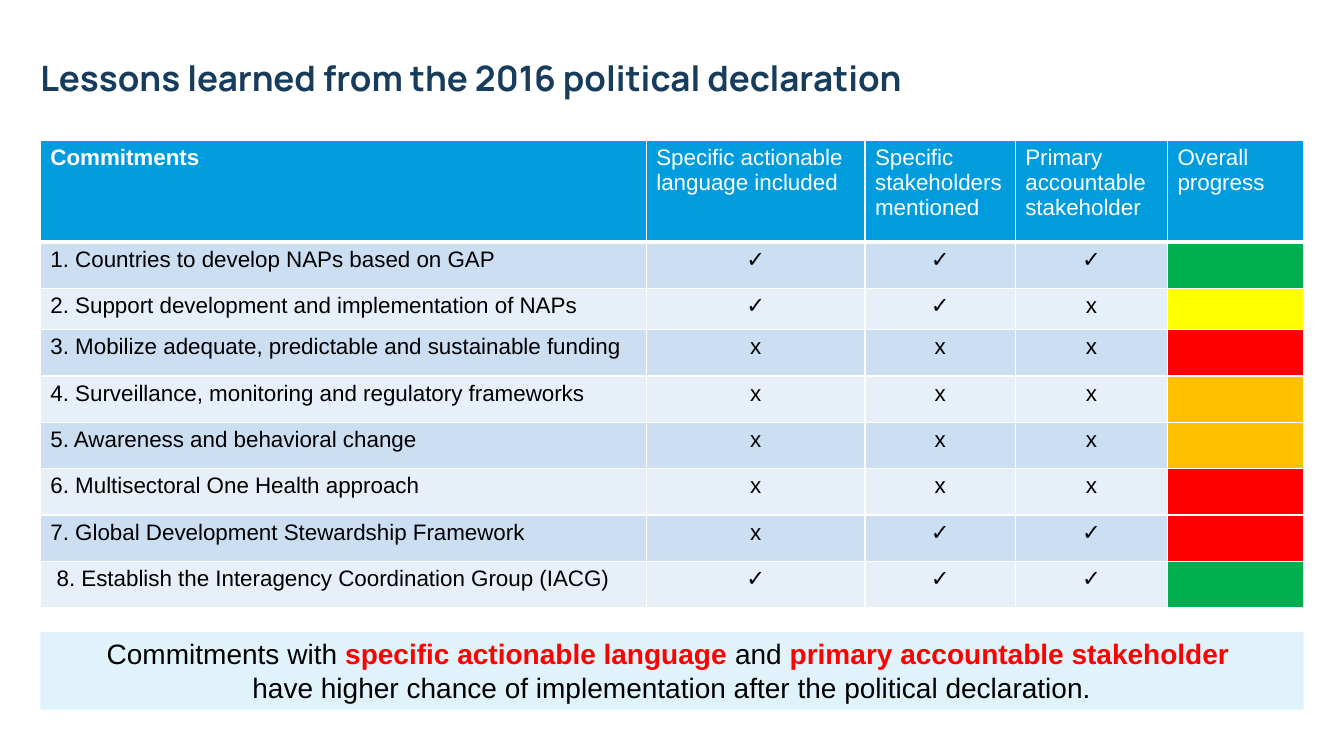
from lxml.etree import SubElement
from pptx import Presentation
from pptx.dml.color import RGBColor
from pptx.enum.shapes import MSO_SHAPE
from pptx.enum.text import MSO_ANCHOR, MSO_AUTO_SIZE, PP_ALIGN
from pptx.oxml import parse_xml
from pptx.oxml.ns import nsdecls
from pptx.util import Inches, Pt

WHITE = RGBColor(0xFF, 0xFF, 0xFF)
BLACK = RGBColor(0x00, 0x00, 0x00)
NAVY = RGBColor(0x18, 0x3C, 0x5C)
BLUE = RGBColor(0x00, 0x9C, 0xDE)
BANDS = (RGBColor(0xCC, 0xDE, 0xF2), RGBColor(0xE7, 0xEF, 0xF9))
PALE_BLUE = RGBColor(0xE0, 0xF3, 0xFB)
GREEN = RGBColor(0x00, 0xB0, 0x50)
YELLOW = RGBColor(0xFF, 0xFF, 0x00)
AMBER = RGBColor(0xFF, 0xC0, 0x00)
RED = RGBColor(0xFF, 0x00, 0x00)

TITLE = "Lessons learned from the 2016 political declaration"
HEADERS = [
    "Commitments",
    "Specific actionable language included",
    "Specific stakeholders mentioned",
    "Primary accountable stakeholder",
    "Overall progress",
]
# Commitment, one mark per criterion, colour of overall progress
COMMITMENTS = [
    ("1. Countries to develop NAPs based on GAP", "✓✓✓", GREEN),
    ("2. Support development and implementation of NAPs", "✓✓x", YELLOW),
    ("3. Mobilize adequate, predictable and sustainable funding", "xxx", RED),
    ("4. Surveillance, monitoring and regulatory frameworks", "xxx", AMBER),
    ("5. Awareness and behavioral change", "xxx", AMBER),
    ("6. Multisectoral One Health approach", "xxx", RED),
    ("7. Global Development Stewardship Framework", "x✓✓", RED),
    (" 8. Establish the Interagency Coordination Group (IACG)", "✓✓✓", GREEN),
]
# Lines of the conclusion, each a list of (text, emphasised)
CONCLUSION = [
    [
        ("Commitments with ", False),
        ("specific actionable language ", True),
        ("and ", False),
        ("primary accountable stakeholder ", True),
    ],
    [("have higher chance of implementation after the political declaration.", False)],
]

LEFT, WIDTH = 0.4, 12.53
TABLE_TOP = 1.39
COLUMN_WIDTHS = [6.01, 2.17, 1.49, 1.51, 1.35]
ROW_HEIGHTS = [1.01, 0.46, 0.41] + [0.46] * 6


def write(para, text, size=16, color=BLACK, bold=False, font="Arial", align=PP_ALIGN.LEFT):
    para.alignment = align
    span = para.add_run()
    span.text = text
    span.font.name = font
    span.font.size = Pt(size)
    span.font.bold = bold
    span.font.color.rgb = color


def style_cell(cell, fill, top=1, bottom=1):
    """Fill a cell and give it white borders, with widths in points."""
    cell.fill.solid()
    cell.fill.fore_color.rgb = fill
    properties = cell._tc.get_or_add_tcPr()
    widths = {"lnL": 1, "lnR": 1, "lnT": top, "lnB": bottom}
    for position, (side, width) in enumerate(widths.items()):
        border = parse_xml(
            f'<a:{side} {nsdecls("a")} w="{Pt(width)}"><a:solidFill>'
            f'<a:srgbClr val="{WHITE}"/></a:solidFill></a:{side}>'
        )
        properties.insert(position, border)


def add_title(page):
    box = page.shapes.add_textbox(Inches(LEFT), Inches(0.26), Inches(10.04), Inches(1.01))
    frame = box.text_frame
    frame.word_wrap = True
    frame.vertical_anchor = MSO_ANCHOR.MIDDLE
    frame.margin_left = frame.margin_right = frame.margin_top = frame.margin_bottom = 0
    write(frame.paragraphs[0], TITLE, size=25, color=NAVY, bold=True, font="Manrope")


def add_commitments(page):
    table = page.shapes.add_table(
        len(ROW_HEIGHTS), len(COLUMN_WIDTHS), Inches(LEFT), Inches(TABLE_TOP),
        Inches(WIDTH), Inches(sum(ROW_HEIGHTS)),
    ).table
    for column, width in zip(table.columns, COLUMN_WIDTHS):
        column.width = Inches(width)
    for row, height in zip(table.rows, ROW_HEIGHTS):
        row.height = Inches(height)

    for column, header in enumerate(HEADERS):
        cell = table.cell(0, column)
        style_cell(cell, BLUE, bottom=3)
        write(cell.text_frame.paragraphs[0], header, color=WHITE, bold=column == 0)

    for row, (commitment, marks, progress) in enumerate(COMMITMENTS, start=1):
        band = BANDS[(row - 1) % 2]
        for column in range(len(HEADERS)):
            is_progress = column == len(HEADERS) - 1
            cell = table.cell(row, column)
            style_cell(cell, progress if is_progress else band, top=3 if row == 1 else 1)
            para = cell.text_frame.paragraphs[0]
            if column == 0:
                write(para, commitment)
            elif not is_progress:
                mark = marks[column - 1]
                write(para, mark, bold=mark == "✓", align=PP_ALIGN.CENTER)


def add_conclusion(page):
    box = page.shapes.add_shape(
        MSO_SHAPE.RECTANGLE, Inches(LEFT), Inches(6.27), Inches(WIDTH), Inches(0.77)
    )
    box.shadow.inherit = False
    box.fill.solid()
    box.fill.fore_color.rgb = PALE_BLUE
    box.line.fill.background()
    frame = box.text_frame
    frame.word_wrap = True
    frame.auto_size = MSO_AUTO_SIZE.SHAPE_TO_FIT_TEXT
    frame.vertical_anchor = MSO_ANCHOR.TOP
    para = frame.paragraphs[0]
    for number, line in enumerate(CONCLUSION):
        if number:
            para.add_line_break()
        for text, emphasised in line:
            write(para, text, size=20, color=RED if emphasised else BLACK,
                  bold=emphasised, align=PP_ALIGN.CENTER)


def main():
    deck = Presentation()
    deck.slide_width, deck.slide_height = Inches(13.33), Inches(7.5)
    page = deck.slides.add_slide(deck.slide_layouts[6])
    add_commitments(page)
    add_title(page)
    add_conclusion(page)
    deck.save("out.pptx")


if __name__ == "__main__":
    main()
